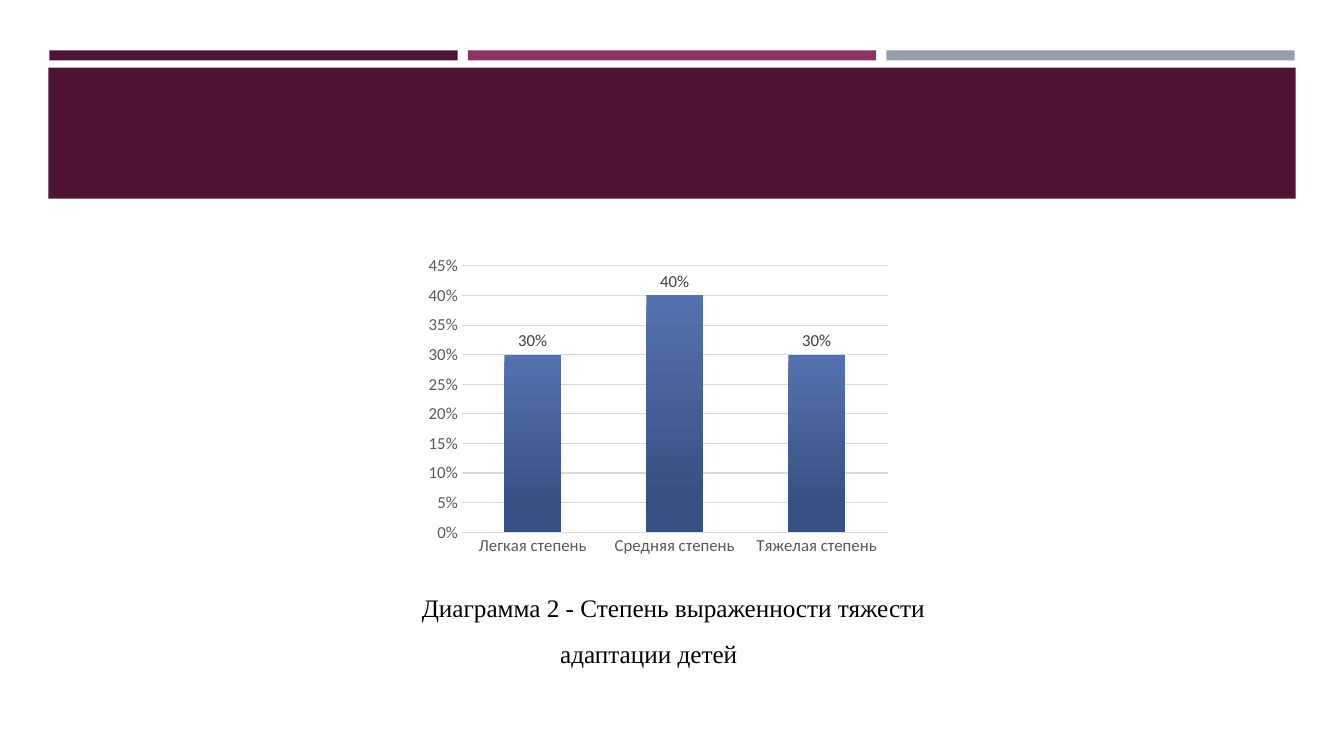
"""Build a slide with a column chart of adaptation severity in children."""
from pptx import Presentation
from pptx.chart.data import CategoryChartData as Data
from pptx.dml.color import RGBColor
from pptx.enum.chart import XL_CHART_TYPE as Kind, XL_LABEL_POSITION as Pos
from pptx.enum.chart import XL_TICK_MARK as Tick
from pptx.enum.shapes import MSO_SHAPE as Shape
from pptx.enum.text import PP_ALIGN as Align
from pptx.oxml import parse_xml
from pptx.oxml.ns import nsdecls
from pptx.util import Inches, Pt

PLUM = RGBColor(0x4D, 0x14, 0x34)
BERRY = RGBColor(0x90, 0x31, 0x63)
STEEL = RGBColor(0x96, 0x9F, 0xA7)
LIGHT = RGBColor(0x54, 0x72, 0xAE)
DARK = RGBColor(0x36, 0x52, 0x84)
GRID = RGBColor(0xD9, 0xD9, 0xD9)
GREY = RGBColor(0x59, 0x59, 0x59)
LABEL = RGBColor(0x40, 0x40, 0x40)
BLACK = RGBColor(0, 0, 0)

CAPTION = "Диаграмма 2 - Степень выраженности тяжести адаптации детей"
LEVELS = {"Легкая степень": 0.3, "Средняя степень": 0.4, "Тяжелая степень": 0.3}
STRIPES = [PLUM, BERRY, STEEL]
STEP = 4.15
BANNER = (0.48, 0.67, 12.37, 1.3)
CHART = (3.76, 2.07, 6.56, 3.86)
TEXT = (3.1, 5.68, 6.67, 0.96)
PLOT = {"x": 0.125, "y": 0.147, "w": 0.644, "h": 0.685}


def place(box):
    return [Inches(n) for n in box]


def add_block(slide, box, color):
    block = slide.shapes.add_shape(Shape.RECTANGLE, *place(box))
    block.shadow.inherit = False
    block.fill.solid()
    block.fill.fore_color.rgb = color
    block.line.fill.background()


def set_font(font, size, color, name="Calibri"):
    font.size = Pt(size)
    font.name = name
    font.color.rgb = color


def set_plot(chart):
    area = chart._chartSpace.xpath(".//c:plotArea")[0]
    for old in area.xpath("./c:layout"):
        area.remove(old)
    modes = "".join(f'<c:{k}Mode val="edge"/>' for k in "xy")
    sizes = "".join(f'<c:{k} val="{v}"/>' for k, v in PLOT.items())
    area.insert(0, parse_xml(
        f'<c:layout {nsdecls("c")}><c:manualLayout><c:layoutTarget val="inner"/>'
        f"{modes}{sizes}</c:manualLayout></c:layout>"))


def add_columns(slide):
    data = Data(number_format="0%")
    data.categories = list(LEVELS)
    data.add_series("Series 1", list(LEVELS.values()))
    chart = slide.shapes.add_chart(Kind.COLUMN_CLUSTERED, *place(CHART), data).chart
    chart.has_legend = chart.has_title = False
    set_font(chart.font, 10, BLACK)
    set_plot(chart)

    cats, vals = chart.category_axis, chart.value_axis
    for axis in (cats, vals):
        axis.major_tick_mark = axis.minor_tick_mark = Tick.NONE
        set_font(axis.tick_labels.font, 12, GREY)
    cats.format.line.color.rgb = GRID
    cats.format.line.width = Pt(1)
    vals.format.line.fill.background()
    vals.minimum_scale, vals.maximum_scale, vals.major_unit = 0, 0.45, 0.05
    vals.tick_labels.number_format = "0%"
    vals.tick_labels.number_format_is_linked = False
    vals.major_gridlines.format.line.color.rgb = GRID
    vals.major_gridlines.format.line.width = Pt(0.75)

    plot = chart.plots[0]
    plot.gap_width = 150
    plot.vary_by_categories = False
    fill = plot.series[0].format.fill
    fill.gradient()
    fill.gradient_angle = 270
    for stop, at, color in zip(fill.gradient_stops, (0, 0.84), (LIGHT, DARK)):
        stop.position = at
        stop.color.rgb = color

    plot.has_data_labels = True
    tags = plot.data_labels
    tags.show_value = True
    tags.position = Pos.OUTSIDE_END
    tags.number_format = "0%"
    tags.number_format_is_linked = False
    set_font(tags.font, 12, LABEL)


def add_caption(slide):
    frame = slide.shapes.add_textbox(*place(TEXT)).text_frame
    frame.word_wrap = True
    para = frame.paragraphs[0]
    para.text = CAPTION
    para.alignment = Align.CENTER
    para.line_spacing = 1.5
    para._p.get_or_add_pPr().set("indent", str(Inches(0.49)))
    set_font(para.font, 18, BLACK, "Times New Roman")


def main():
    deck = Presentation()
    deck.slide_width, deck.slide_height = Inches(13.33), Inches(7.5)
    slide = deck.slides.add_slide(deck.slide_layouts[6])
    for i, color in enumerate(STRIPES):
        add_block(slide, (0.49 + i * STEP, 0.5, 4.05, 0.1), color)
    add_block(slide, BANNER, PLUM)
    add_columns(slide)
    add_caption(slide)
    deck.save("out.pptx")


if __name__ == "__main__":
    main()
